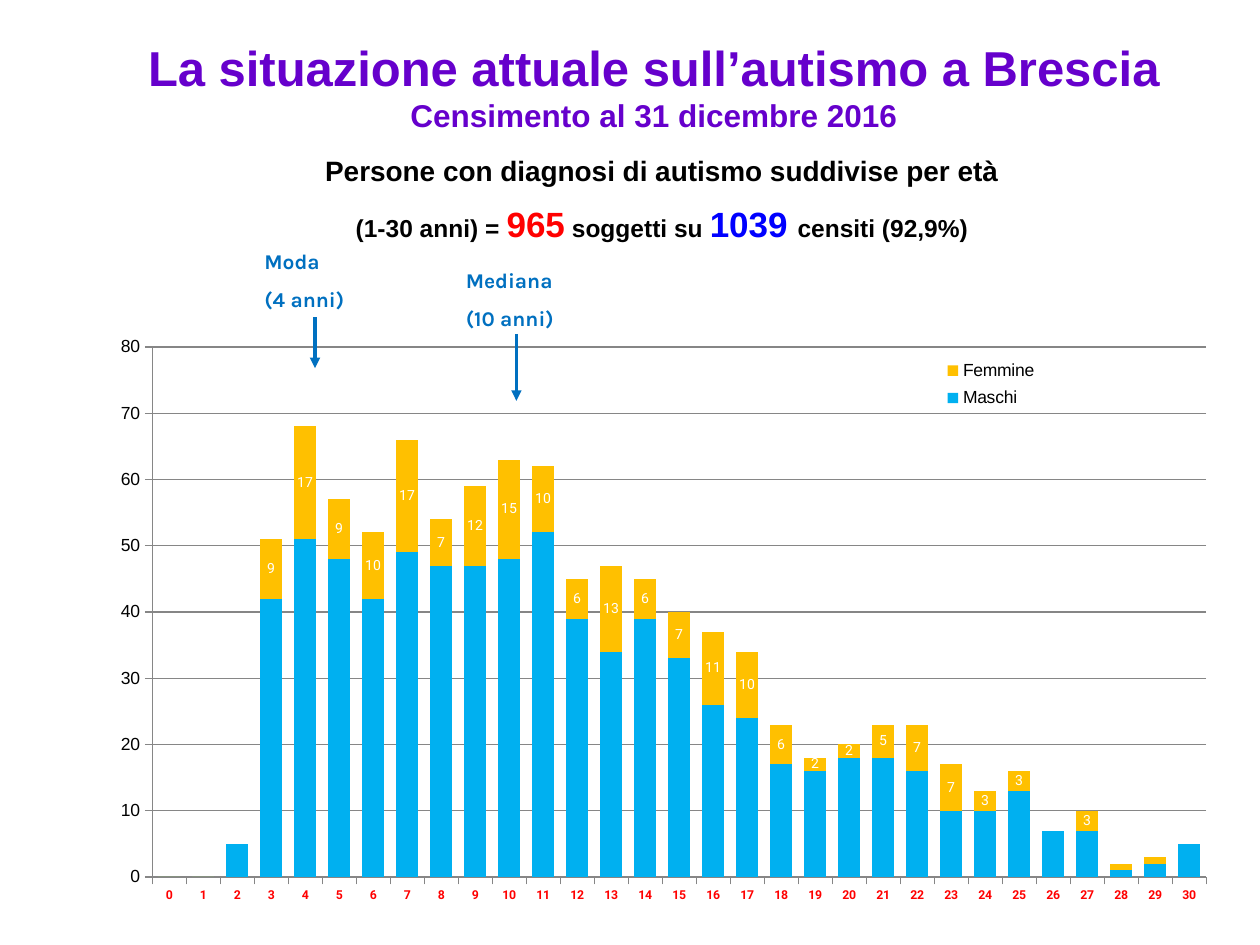
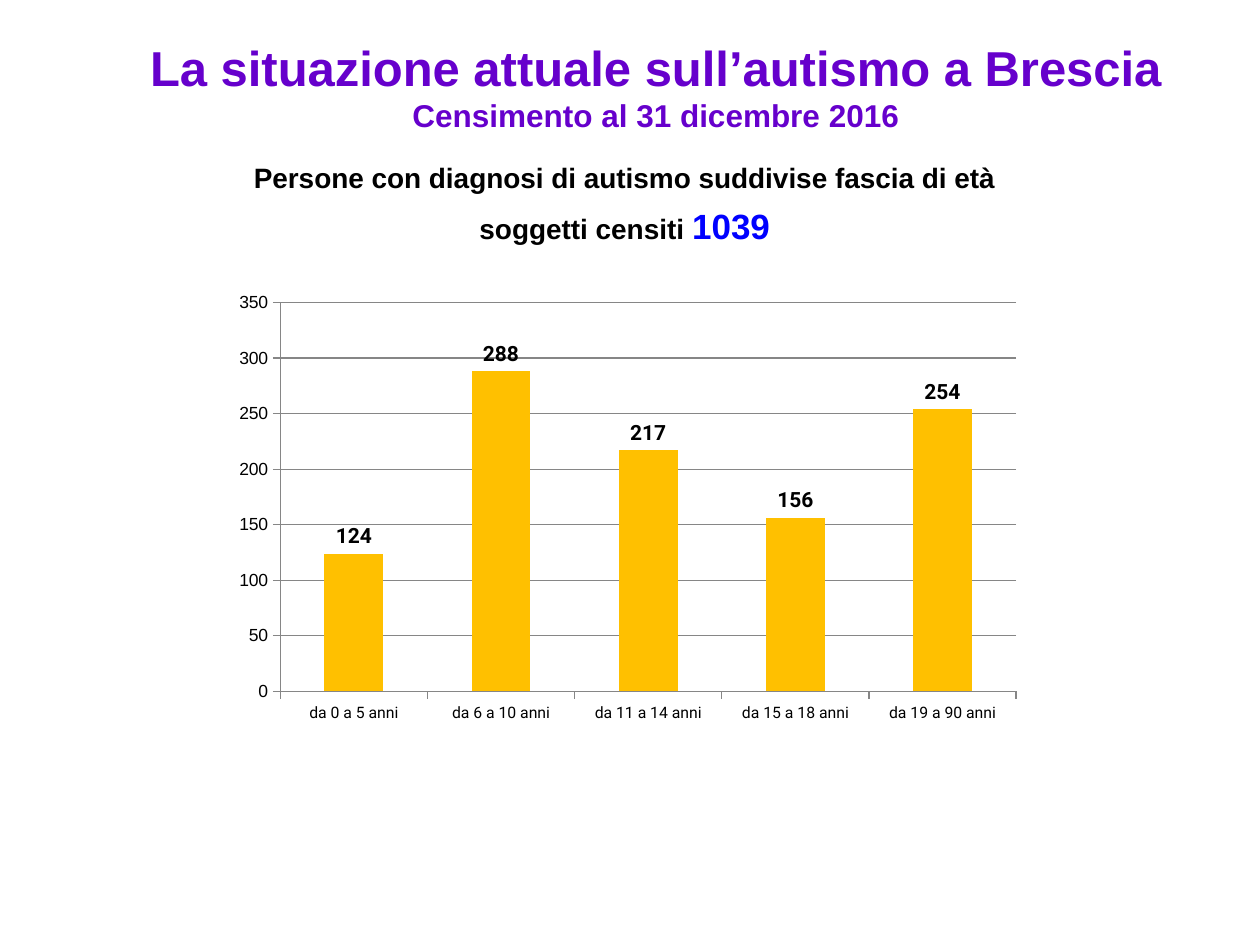
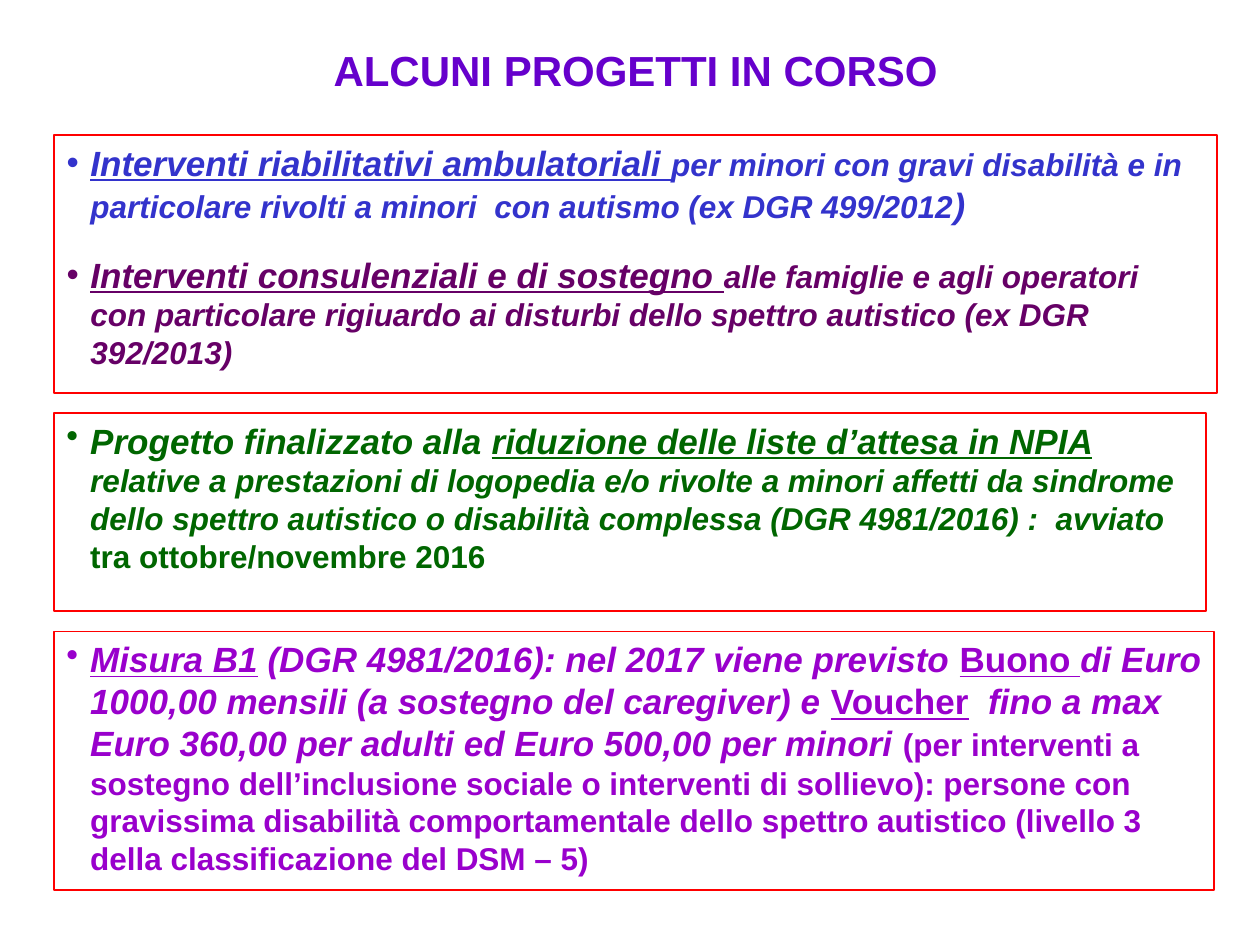
"""Builds three slides on autism in Brescia: two charts and a list of projects."""
from lxml import etree
from pptx import Presentation
from pptx.chart.data import CategoryChartData
from pptx.dml.color import RGBColor
from pptx.enum.chart import XL_CHART_TYPE, XL_LABEL_POSITION, XL_LEGEND_POSITION, XL_TICK_MARK
from pptx.enum.shapes import MSO_CONNECTOR, MSO_SHAPE
from pptx.enum.text import MSO_ANCHOR, MSO_AUTO_SIZE, PP_ALIGN
from pptx.oxml.ns import qn
from pptx.util import Cm, Pt

STACK, CLUSTER = XL_CHART_TYPE.COLUMN_STACKED, XL_CHART_TYPE.COLUMN_CLUSTERED
MIDST, ABOVE = XL_LABEL_POSITION.CENTER, XL_LABEL_POSITION.OUTSIDE_END
RIGHT, OUT = XL_LEGEND_POSITION.RIGHT, XL_TICK_MARK.OUTSIDE
TOP, MIDDLE = MSO_ANCHOR.TOP, MSO_ANCHOR.MIDDLE
LEFT, CENTER = PP_ALIGN.LEFT, PP_ALIGN.CENTER
STRAIGHT, RECT, FIXED = MSO_CONNECTOR.STRAIGHT, MSO_SHAPE.RECTANGLE, MSO_AUTO_SIZE.NONE

BLACK, WHITE, GRAY = RGBColor(0, 0, 0), RGBColor(255, 255, 255), RGBColor(0x86, 0x86, 0x86)
RED, BLUE, PURPLE = RGBColor(255, 0, 0), RGBColor(0, 0, 255), RGBColor(0x66, 0, 0xCC)
STEEL, SKY, GOLD = RGBColor(0, 0x70, 0xC0), RGBColor(0, 0xB0, 0xF0), RGBColor(255, 0xC0, 0)
INDIGO, PLUM = RGBColor(0x33, 0x33, 0xCC), RGBColor(0x66, 0, 0x66)
GREEN, VIOLET = RGBColor(0, 0x66, 0), RGBColor(0x99, 0, 0xCC)

HEAD = [
    [("La situazione attuale sull’autismo a Brescia", 28)],
    [("Censimento al 31 dicembre 2016", 18)],
]
AGE_TEXT = [
    [("Persone con diagnosi di autismo suddivise per età", 16)],
    [("(1-30 anni) = ", 14), ("965", 20, "", RED), (" soggetti su ", 14),
     ("1039 ", 20, "", BLUE), ("censiti (92,9%)", 14)],
]
BAND_TEXT = [
    [("Persone con diagnosi di autismo suddivise fascia di età", 16)],
    [("soggetti censiti ", 16), ("1039", 20, "", BLUE)],
]
NOTES = [
    ("Mediana", "(10 anni)", (9.14, 5.26, 2.54, 1.47), 8.08),
    ("Moda", "(4 anni)", (5.08, 4.88, 2.54, 1.52), 7.42),
]
AGES = [str(age) for age in range(31)]
AGE_DATA = [
    ("Maschi", SKY, [0, 0, 5, 42, 51, 48, 42, 49, 47, 47, 48, 52, 39, 34, 39, 33,
                     26, 24, 17, 16, 18, 18, 16, 10, 10, 13, 7, 7, 1, 2, 5]),
    ("Femmine", GOLD, [0, 0, 0, 9, 17, 9, 10, 17, 7, 12, 15, 10, 6, 13, 6, 7,
                       11, 10, 6, 2, 2, 5, 7, 7, 3, 3, 0, 3, 1, 1, 0]),
]
BANDS = ["da 0 a 5 anni", "da 6 a 10 anni", "da 11 a 14 anni", "da 15 a 18 anni",
         "da 19 a 90 anni"]
BAND_DATA = [("Series 1", GOLD, [124, 288, 217, 156, 254])]
CARE = [
    [("Interventi riabilitativi ambulatoriali ", 20, "iu", INDIGO),
     ("per minori con gravi disabilità e in particolare rivolti a minori  con autismo "
      "(ex DGR 499/2012", 18, "i", INDIGO),
     (")", 20, "i", INDIGO)],
    [("Interventi consulenziali e di sostegno ", 20, "iu"),
     ("alle famiglie e agli operatori  con particolare rigiuardo ai disturbi dello "
      "spettro autistico (ex DGR 392/2013)", 18, "i")],
]
QUEUE = [
    [("Progetto finalizzato alla ", 20, "i"),
     ("riduzione delle liste d’attesa in NPIA ", 20, "iu"),
     ("relative a prestazioni di logopedia e/o rivolte a minori affetti da sindrome dello "
      "spettro autistico o disabilità complessa (DGR 4981/2016) :  avviato ", 18, "i"),
     ("tra ottobre/novembre 2016", 18)],
]
GRANT = [
    [("Misura B1", 20, "iu"),
     (" (DGR 4981/2016): nel 2017 viene previsto ", 20, "i"),
     ("Buono ", 20, "u"),
     ("di Euro 1000,00 mensili (a sostegno del caregiver) e ", 20, "i"),
     ("Voucher", 20, "u"),
     ("  fino a max Euro 360,00 per adulti ed Euro 500,00 per minori ", 20, "i"),
     ("(per interventi a sostegno dell’inclusione sociale o interventi di sollievo): "
      "persone con gravissima disabilità comportamentale dello spettro autistico "
      "(livello 3 della classificazione del DSM – 5)", 18)],
]


def place(shape, box):
    shape.left, shape.top, shape.width, shape.height = map(Cm, box)


def write(shape, paras, color, align=CENTER, anchor=TOP, face="Arial", gap=0,
          pitch=1.0, bullet=False):
    frame = shape.text_frame
    frame.word_wrap, frame.auto_size, frame.vertical_anchor = True, FIXED, anchor
    for rank, runs in enumerate(paras):
        para = frame.add_paragraph() if rank else frame.paragraphs[0]
        if bullet:
            props = para._p.get_or_add_pPr()
            props.set("marL", str(Cm(0.48)))
            props.set("indent", str(-Cm(0.48)))
            etree.SubElement(props, qn("a:buChar")).set("char", "•")
        para.alignment, para.line_spacing = align, pitch
        para.space_before = Pt(gap if rank else 0)
        para.font.name, para.font.bold = face, True
        para.font.color.rgb = color
        for text, size, style, tint in [(*run, "", None)[:4] if len(run) == 2
                                        else (*run, None)[:4] for run in runs]:
            run = para.add_run()
            run.text = text
            run.font.size = Pt(size)
            if "i" in style:
                run.font.italic = True
            if "u" in style:
                run.font.underline = True
            if tint is not None:
                run.font.color.rgb = tint


def add_text(slide, box, paras, color, **style):
    shape = slide.shapes.add_textbox(*map(Cm, box))
    write(shape, paras, color, **style)
    return shape


def add_title(slide, box, paras, anchor=MIDDLE):
    place(slide.shapes.title, box)
    write(slide.shapes.title, paras, PURPLE, anchor=anchor)


def add_note(slide, name, age, box, end):
    note = add_text(slide, box, [[(name, 12)], [(age, 12)]], STEEL,
                    align=LEFT, face="Karla", gap=7.5)
    mid = note.left + note.width // 2
    arrow = slide.shapes.add_connector(STRAIGHT, mid, note.top + note.height, mid, Cm(end))
    arrow.begin_connect(note, 2)
    arrow.line.color.rgb, arrow.line.width = STEEL, Pt(2)
    props = arrow._element.spPr
    etree.SubElement(props.find(qn("a:ln")), qn("a:tailEnd")).set("type", "triangle")
    etree.SubElement(props, qn("a:effectLst"))


def set_font(font, size, face, color, bold=False):
    font.size, font.name, font.bold = Pt(size), face, bold
    font.color.rgb = color


def set_place(parent, spot, inner=False):
    for old in parent.findall(qn("c:layout")):
        parent.remove(old)
    layout = etree.Element(qn("c:layout"))
    manual = etree.SubElement(layout, qn("c:manualLayout"))
    pairs = [("layoutTarget", "inner")] if inner else []
    pairs += [("xMode", "edge"), ("yMode", "edge"), *zip("xywh", spot)]
    for tag, value in pairs:
        etree.SubElement(manual, qn("c:" + tag)).set("val", str(value))
    parent.insert(0 if inner else 1, layout)


def add_columns(slide, kind, box, names, data, gap, top, step):
    source = CategoryChartData()
    source.categories = names
    for name, _, values in data:
        source.add_series(name, values)
    chart = slide.shapes.add_chart(kind, *map(Cm, box), source).chart
    chart.has_title = chart.has_legend = False
    set_font(chart.font, 10, "Arial", BLACK)
    plot = chart.plots[0]
    plot.vary_by_categories, plot.gap_width = False, gap
    for series, (_, color, _) in zip(plot.series, data):
        series.format.fill.solid()
        series.format.fill.fore_color.rgb = color
    scale = chart.value_axis
    scale.minimum_scale, scale.maximum_scale, scale.major_unit = 0, top, step
    scale.has_major_gridlines = True
    for part in (scale, chart.category_axis, scale.major_gridlines):
        part.format.line.color.rgb, part.format.line.width = GRAY, Pt(0.75)
    for axis in (scale, chart.category_axis):
        axis.major_tick_mark = OUT
    return chart


def add_labels(series, spot, form, *font):
    labels = series.data_labels
    labels.show_value, labels.position = True, spot
    labels.number_format, labels.number_format_is_linked = form, False
    set_font(labels.font, *font)


def build_ages(slide):
    chart = add_columns(slide, STACK, (1.47, 5.99, 22.86, 12.57), AGES, AGE_DATA, 54, 80, 10)
    plot = chart.plots[0]
    plot.overlap = 100
    set_font(chart.category_axis.tick_labels.font, 7, "Roboto", RED, True)
    add_labels(plot.series[1], MIDST, "[>1]0;;", 8, "Roboto", WHITE)
    chart.has_legend = True
    chart.legend.position, chart.legend.include_in_layout = RIGHT, False
    set_place(chart.legend._element, (0.76, 0.09, 0.1, 0.1))
    set_place(chart._chartSpace.chart.plotArea, (0.07, 0.08, 0.93, 0.85), True)
    add_text(slide, (2.97, 2.97, 20.75, 2.13), AGE_TEXT, BLACK, gap=8.8)
    add_title(slide, (1.47, 0.1, 23.42, 3.25), HEAD)
    for note in NOTES:
        add_note(slide, *note)


def build_bands(slide):
    chart = add_columns(slide, CLUSTER, (4.5, 5.72, 16.31, 9.02), BANDS, BAND_DATA, 150, 350, 50)
    set_font(chart.category_axis.tick_labels.font, 9, "Roboto", BLACK)
    add_labels(chart.plots[0].series[0], ABOVE, "0", 12, "Roboto", BLACK, True)
    add_text(slide, (1.9, 3.18, 21.39, 1.96), BAND_TEXT, BLACK, gap=8.8, pitch=0.9)
    add_title(slide, (1.83, 0.61, 22.78, 2.24), HEAD)


def build_projects(slide):
    add_title(slide, (1.5, 0.76, 22.63, 1.96), [[("ALCUNI PROGETTI IN CORSO", 24)]], TOP)
    body = slide.placeholders[1]
    place(body, (1.09, 2.72, 23.44, 5.21))
    queue, grant = [slide.shapes.add_shape(RECT, *map(Cm, box)) for box in
                    ((1.09, 8.33, 23.22, 3.99), (1.09, 12.73, 23.39, 5.21))]
    for shape, paras, color in ((body, CARE, PLUM), (queue, QUEUE, GREEN),
                                (grant, GRANT, VIOLET)):
        shape.shadow.inherit = False
        shape.fill.background()
        shape.line.color.rgb, shape.line.width = RED, Pt(1)
        write(shape, paras, color, align=LEFT, gap=16, bullet=True)
    grant.fill.solid()
    grant.fill.fore_color.rgb = WHITE


def main():
    deck = Presentation()
    deck.slide_width, deck.slide_height = Cm(25.4), Cm(19.05)
    for layout, build in ((5, build_ages), (5, build_bands), (1, build_projects)):
        build(deck.slides.add_slide(deck.slide_layouts[layout]))
    deck.save("out.pptx")


if __name__ == "__main__":
    main()
